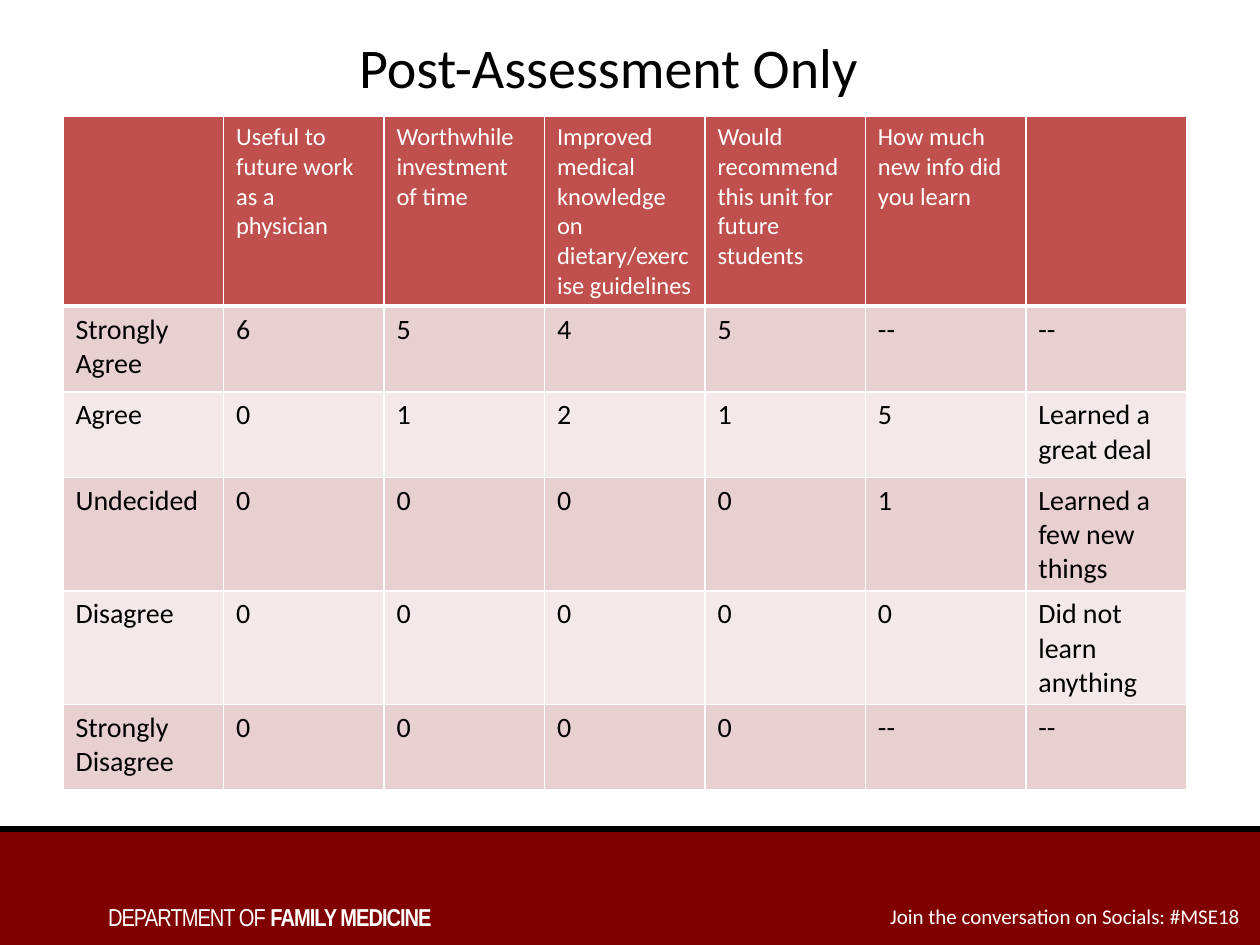
"""Build the post-assessment results slide."""
import pptx
import pptx.dml.color
import pptx.enum.shapes
import pptx.enum.text
import pptx.oxml.ns
import pptx.util
from lxml import etree

RGBColor = pptx.dml.color.RGBColor
WHITE = RGBColor(0xFF, 0xFF, 0xFF)
BLACK = RGBColor(0x00, 0x00, 0x00)
MAROON = RGBColor(0x80, 0x00, 0x00)
HEADER_RED = RGBColor(0xC0, 0x50, 0x4D)
BANDS = (RGBColor(0xE8, 0xD0, 0xD0), RGBColor(0xF4, 0xE9, 0xE9))

SLIDE_WIDTH = pptx.util.Inches(10)
SLIDE_HEIGHT = pptx.util.Inches(7.5)
BAND_TOP = 87.73
COLUMN_WIDTH = 12.74
ROW_HEIGHTS = (20.13, 9.07, 9.07, 10.4, 10.4, 9.07)
HEADER_BORDERS = {"lnL": 1, "lnR": 1, "lnT": 1, "lnB": 3}

RESULTS = (
    ("", "Useful to future work as a physician", "Worthwhile investment of time",
     "Improved medical knowledge on dietary/exercise guidelines",
     "Would recommend this unit for future students",
     "How much new info did you learn", ""),
    ("Strongly Agree", "6", "5", "4", "5", "--", "--"),
    ("Agree", "0", "1", "2", "1", "5", "Learned a great deal"),
    ("Undecided", "0", "0", "0", "0", "1", "Learned a few new things"),
    ("Disagree", "0", "0", "0", "0", "0", "Did not learn anything"),
    ("Strongly Disagree", "0", "0", "0", "0", "--", "--"),
)


def across(percent):
    """Return a length given as a percentage of the slide width."""
    return round(SLIDE_WIDTH * percent / 100)


def down(percent):
    """Return a length given as a percentage of the slide height."""
    return round(SLIDE_HEIGHT * percent / 100)


def area(left, top, width, height):
    """Return a rectangle given in percentages of the slide."""
    return across(left), down(top), across(width), down(height)


def add_run(paragraph, text, size, color, name="Calibri", bold=False, spacing=None):
    """Add one formatted run to a paragraph."""
    run = paragraph.add_run()
    run.text = text
    run.font.size = pptx.util.Pt(size)
    run.font.name = name
    run.font.bold = bold
    run.font.color.rgb = color
    if spacing is not None:
        run.font._element.set("spc", str(round(spacing * 100)))


def add_title(slide, text):
    """Place and fill the title placeholder."""
    title = slide.shapes.title
    title.left, title.top, title.width, title.height = area(25.8, 2.8, 45, 8.53)
    frame = title.text_frame
    frame.vertical_anchor = pptx.enum.text.MSO_ANCHOR.TOP
    frame.auto_size = pptx.enum.text.MSO_AUTO_SIZE.SHAPE_TO_FIT_TEXT
    frame.paragraphs[0].alignment = pptx.enum.text.PP_ALIGN.CENTER
    add_run(frame.paragraphs[0], text, 32, BLACK)


def add_footer_band(slide):
    """Draw the maroon band and the black rule along its top."""
    band = slide.shapes.add_shape(
        pptx.enum.shapes.MSO_SHAPE.RECTANGLE, *area(0, BAND_TOP, 100, 100 - BAND_TOP))
    band.shadow.inherit = False
    band.fill.solid()
    band.fill.fore_color.rgb = MAROON
    band.line.color.rgb = MAROON
    band.line.width = pptx.util.Pt(2)
    rule = slide.shapes.add_connector(
        pptx.enum.shapes.MSO_CONNECTOR.STRAIGHT,
        0, down(BAND_TOP), SLIDE_WIDTH, down(BAND_TOP))
    rule.line.color.rgb = BLACK
    rule.line.width = pptx.util.Pt(3)
    etree.SubElement(rule._element.spPr, pptx.oxml.ns.qn("a:effectLst"))


def add_label(slide, place, wrap=True, alignment=pptx.enum.text.PP_ALIGN.LEFT):
    """Add a text box and return its paragraph."""
    frame = slide.shapes.add_textbox(*area(*place)).text_frame
    frame.word_wrap = wrap
    frame.auto_size = pptx.enum.text.MSO_AUTO_SIZE.SHAPE_TO_FIT_TEXT
    frame.paragraphs[0].alignment = alignment
    return frame.paragraphs[0]


def add_header_borders(cell):
    """Outline a header cell in white with a heavier bottom edge."""
    properties = cell._tc.get_or_add_tcPr()
    for tag, points in HEADER_BORDERS.items():
        edge = etree.SubElement(
            properties, pptx.oxml.ns.qn(f"a:{tag}"), w=str(pptx.util.Pt(points)))
        fill = etree.SubElement(edge, pptx.oxml.ns.qn("a:solidFill"))
        etree.SubElement(fill, pptx.oxml.ns.qn("a:srgbClr"), val=str(WHITE))


def add_results_table(slide):
    """Add the table of answers with a red header and banded rows."""
    column_count = len(RESULTS[0])
    table = slide.shapes.add_table(
        len(RESULTS), column_count,
        *area(5, 12.27, COLUMN_WIDTH * column_count, sum(ROW_HEIGHTS))).table
    for column in table.columns:
        column.width = across(COLUMN_WIDTH)
    for row_index, texts in enumerate(RESULTS):
        is_header = row_index == 0
        table.rows[row_index].height = down(ROW_HEIGHTS[row_index])
        for column_index, text in enumerate(texts):
            cell = table.cell(row_index, column_index)
            if is_header:
                add_header_borders(cell)
            cell.fill.solid()
            cell.fill.fore_color.rgb = HEADER_RED if is_header else BANDS[(row_index - 1) % 2]
            if text:
                add_run(cell.text_frame.paragraphs[0], text,
                        14 if is_header else 16, WHITE if is_header else BLACK)


def main():
    """Build and save the slide."""
    presentation = pptx.Presentation()
    presentation.slide_width = SLIDE_WIDTH
    presentation.slide_height = SLIDE_HEIGHT
    slide = presentation.slides.add_slide(presentation.slide_layouts[5])
    add_footer_band(slide)
    department = add_label(slide, (7.6, 94.8, 42.2, 4.53))
    add_run(department, "DEPARTMENT OF ", 14, WHITE, "Arial Narrow", spacing=-0.6)
    add_run(department, "FAMILY MEDICINE", 14, WHITE, "Arial Narrow", bold=True, spacing=-0.6)
    invitation = add_label(slide, (69.1, 94.93, 30.3, 4), wrap=False,
                           alignment=pptx.enum.text.PP_ALIGN.RIGHT)
    add_run(invitation, "Join the conversation on Socials: #MSE18", 12, WHITE)
    add_results_table(slide)
    add_title(slide, "Post-Assessment Only")
    presentation.save("out.pptx")


if __name__ == "__main__":
    main()
